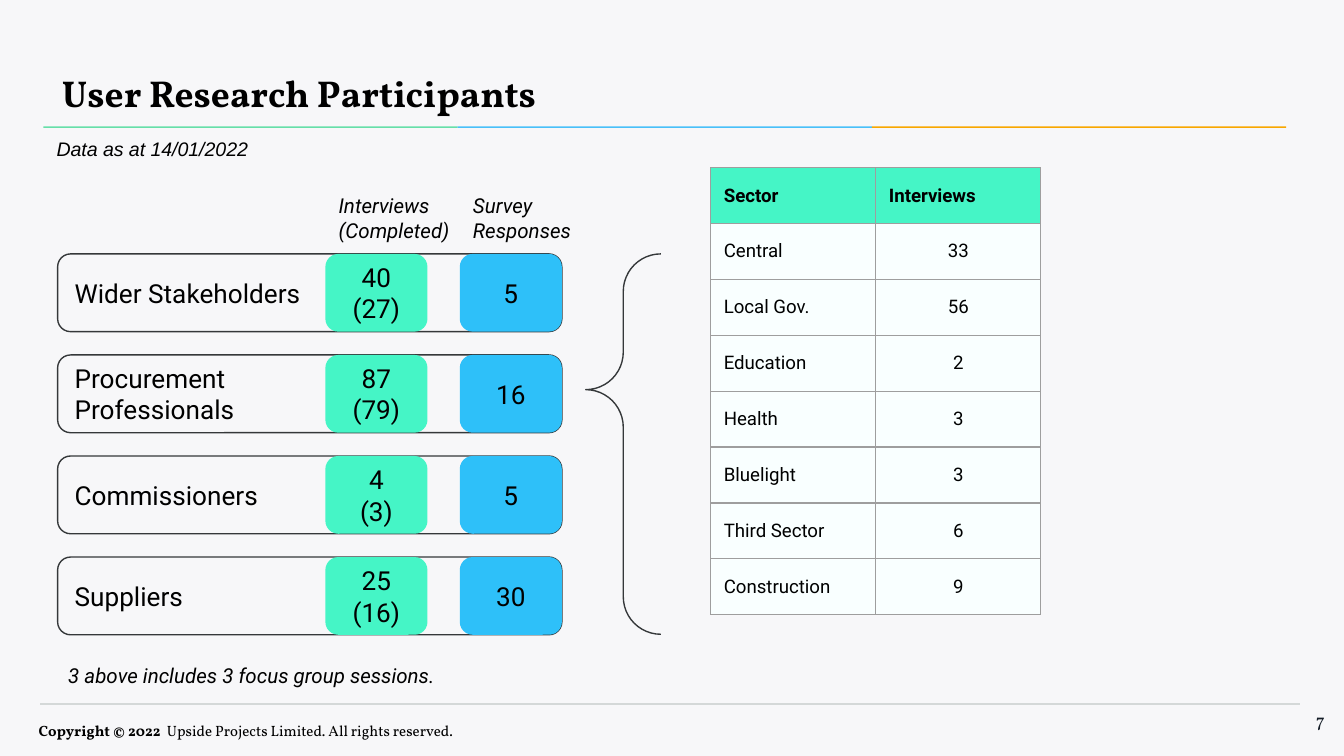
"""Build the slide of user research participants."""

from dataclasses import dataclass
from typing import Any

from lxml.etree import SubElement
from pptx import Presentation
from pptx.dml.color import RGBColor
from pptx.enum.shapes import MSO_CONNECTOR, MSO_SHAPE
from pptx.enum.text import MSO_ANCHOR, PP_ALIGN
from pptx.oxml.ns import qn
from pptx.util import Cm, Pt

BLACK = RGBColor(0x00, 0x00, 0x00)
INK = RGBColor(0x15, 0x1E, 0x28)
OUTLINE = RGBColor(0x35, 0x38, 0x3A)
PAPER = RGBColor(0xF7, 0xF7, 0xF9)
MINT = RGBColor(0x45, 0xF5, 0xC6)
SKY = RGBColor(0x2E, 0xC0, 0xF9)
CELL = RGBColor(0xF9, 0xFF, 0xFF)
RULE = RGBColor(0xD4, 0xD8, 0xD8)
BORDER = RGBColor(0x9E, 0x9E, 0x9E)
STRIPES = (
    RGBColor(0x66, 0xDF, 0xA9),
    RGBColor(0x49, 0xC0, 0xF9),
    RGBColor(0xF8, 0xA7, 0x00),
)

BODY = {"name": "Roboto", "size": Pt(14), "bold": False}
NOTE = {"name": "Roboto", "size": Pt(11), "italic": True}
DATE = {"name": "Arial", "size": Pt(10.5), "italic": True}
TITLE = {"name": "Vollkorn", "size": Pt(20), "bold": True}
NUMBER = {"name": "Vollkorn", "size": Pt(10)}
FOOTER = {"name": "Vollkorn", "size": Pt(8), "bold": False}
TABLE_BODY = {"name": "Roboto", "size": Pt(10), "bold": False}


@dataclass(frozen=True)
class Area:
    """A rectangle in centimetres."""

    left: float
    top: float
    width: float
    height: float

    def lengths(self) -> tuple[Cm, Cm, Cm, Cm]:
        """Return the four lengths for a python-pptx call."""
        return Cm(self.left), Cm(self.top), Cm(self.width), Cm(self.height)


@dataclass(frozen=True)
class Group:
    """A group of participants with its counts."""

    name: tuple[str, ...]
    interviews: int
    completed: int
    responses: int


@dataclass(frozen=True)
class Label:
    """A text box with one paragraph."""

    text: str
    area: Area
    look: dict[str, Any]
    inset: tuple[float, float] = (0.25, 0.25)
    color: RGBColor = BLACK
    align: PP_ALIGN = PP_ALIGN.LEFT


GROUPS = (
    Group(("Wider Stakeholders",), 40, 27, 5),
    Group(("Procurement", "Professionals"), 87, 79, 16),
    Group(("Commissioners",), 4, 3, 5),
    Group(("Suppliers",), 25, 16, 30),
)
SECTORS = (
    ("Sector", "Interviews"),
    ("Central", "33"),
    ("Local Gov.", "56"),
    ("Education", "2"),
    ("Health", "3"),
    ("Bluelight", "3"),
    ("Third Sector", "6"),
    ("Construction", "9"),
)
LABELS = (
    Label("User Research Participants", Area(1.07, 1.23, 18.62, 0.97), TITLE, (0.1, 0.1)),
    Label("Data as at 14/01/2022", Area(0.82, 2.46, 5.03, 0.71), DATE, (0.25, 0.13)),
    Label("3 above includes 3 focus group sessions.", Area(1.04, 12.29, 8.79, 0.99), NOTE),
    Label("Interviews (Completed)", Area(6.15, 3.4, 2.97, 1.45), NOTE),
    Label("Survey Responses", Area(8.69, 3.4, 2.97, 1.45), NOTE),
    Label("7", Area(23.77, 13.18, 1.52, 1.09), NUMBER, color=INK, align=PP_ALIGN.RIGHT),
)
ROW = Area(1.09, 4.8, 9.53, 1.47)
ROW_STEP = 1.91
COUNT_WIDTH = 1.93
INTERVIEWS_LEFT, RESPONSES_LEFT = 6.15, 8.69


def format_font(font: Any, look: dict[str, Any], color: RGBColor = BLACK) -> None:
    """Apply a dict of format values and a colour to a font."""
    for key, value in look.items():
        setattr(font, key, value)
    font.color.rgb = color


def set_margins(target: Any, across: float, down: float) -> None:
    """Set the inner margins of a text frame or cell."""
    for side, size in (("left", across), ("right", across), ("top", down), ("bottom", down)):
        setattr(target, f"margin_{side}", Cm(size))


def write_lines(frame: Any, lines: tuple[str, ...], look: dict[str, Any],
                align: PP_ALIGN, color: RGBColor = BLACK) -> None:
    """Write one paragraph per line."""
    frame.word_wrap = True
    for index, line in enumerate(lines):
        para = frame.paragraphs[0] if index == 0 else frame.add_paragraph()
        para.alignment = align
        span = para.add_run()
        span.text = line
        format_font(span.font, look, color)


def draw_label(page: Any, label: Label) -> None:
    """Draw a text box."""
    frame = page.shapes.add_textbox(*label.area.lengths()).text_frame
    set_margins(frame, *label.inset)
    write_lines(frame, (label.text,), label.look, label.align, label.color)


def draw_shape(page: Any, kind: MSO_SHAPE, area: Area, fill: RGBColor | None = None,
               outline: RGBColor | None = None) -> Any:
    """Draw a preset shape without shadow."""
    shape = page.shapes.add_shape(kind, *area.lengths())
    shape.shadow.inherit = False
    if fill is None:
        shape.fill.background()
    else:
        shape.fill.solid()
        shape.fill.fore_color.rgb = fill
    if outline is None:
        shape.line.fill.background()
    else:
        shape.line.color.rgb = outline
        shape.line.width = Pt(0.75)
    return shape


def draw_card(page: Any, area: Area, lines: tuple[str, ...], fill: RGBColor,
              outline: RGBColor | None = None, align: PP_ALIGN = PP_ALIGN.CENTER) -> None:
    """Draw a rounded card with text."""
    card = draw_shape(page, MSO_SHAPE.ROUNDED_RECTANGLE, area, fill, outline)
    card.adjustments[0] = 0.167
    frame = card.text_frame
    frame.vertical_anchor = MSO_ANCHOR.MIDDLE
    set_margins(frame, 0.25, 0.25)
    write_lines(frame, lines, BODY, align)


def draw_group(page: Any, group: Group, top: float) -> None:
    """Draw one row of participants with both counts."""
    draw_card(page, Area(ROW.left, top, ROW.width, ROW.height), group.name,
              PAPER, OUTLINE, PP_ALIGN.LEFT)
    counts = (
        (INTERVIEWS_LEFT, (str(group.interviews), f"({group.completed})"), MINT),
        (RESPONSES_LEFT, (str(group.responses),), SKY),
    )
    for left, lines, fill in counts:
        draw_card(page, Area(left, top, COUNT_WIDTH, ROW.height), lines, fill)


def add_borders(cell: Any) -> None:
    """Give a cell a thin border on each side."""
    properties = cell._tc.get_or_add_tcPr()
    for side in ("lnL", "lnR", "lnT", "lnB"):
        line = SubElement(properties, qn(f"a:{side}"), w=str(Pt(0.75)))
        solid = SubElement(line, qn("a:solidFill"))
        SubElement(solid, qn("a:srgbClr"), val=str(BORDER))


def draw_sectors(page: Any, area: Area) -> None:
    """Draw the table of interviews by sector."""
    table = page.shapes.add_table(len(SECTORS), 2, *area.lengths()).table
    table.first_row = table.horz_banding = False
    for row, values in enumerate(SECTORS):
        for column, text in enumerate(values):
            header = row == 0
            cell = table.cell(row, column)
            add_borders(cell)
            cell.fill.solid()
            cell.fill.fore_color.rgb = MINT if header else CELL
            cell.vertical_anchor = MSO_ANCHOR.MIDDLE
            set_margins(cell, 0.25, 0.25)
            align = PP_ALIGN.CENTER if column and not header else PP_ALIGN.LEFT
            write_lines(cell.text_frame, (text,), TABLE_BODY | {"bold": header}, align)


def draw_footer(page: Any) -> None:
    """Draw the footer rule and the copyright line."""
    rule = page.shapes.add_connector(
        MSO_CONNECTOR.STRAIGHT, Cm(0.76), Cm(13.31), Cm(24.56), Cm(13.31))
    rule.line.color.rgb = RULE
    rule.line.width = Pt(0.75)
    SubElement(rule._element.spPr, qn("a:effectLst"))
    draw_label(page, Label("Copyright © 2022  ", Area(0.48, 13.44, 15.29, 0.61),
                           FOOTER | {"bold": True}, (0.25, 0.13)))
    para = page.shapes[-1].text_frame.paragraphs[0]
    para.line_spacing = 1.2
    span = para.add_run()
    span.text = "Upside Projects Limited. All rights reserved."
    format_font(span.font, FOOTER)


def main() -> None:
    """Build and save the deck."""
    deck = Presentation()
    deck.slide_width, deck.slide_height = Cm(25.4), Cm(14.29)
    page = deck.slides.add_slide(deck.slide_layouts[6])
    page.background.fill.solid()
    page.background.fill.fore_color.rgb = PAPER
    draw_footer(page)
    for index, color in enumerate(STRIPES):
        draw_shape(page, MSO_SHAPE.RECTANGLE, Area(0.82 + index * 7.83, 2.39, 7.83, 0.03), color)
    for index, group in enumerate(GROUPS):
        draw_group(page, group, ROW.top + index * ROW_STEP)
    for label in LABELS:
        draw_label(page, label)
    brace = draw_shape(page, MSO_SHAPE.LEFT_BRACE, Area(11.07, 4.8, 1.42, 7.19), outline=OUTLINE)
    brace.adjustments[0], brace.adjustments[1] = 0.5, 0.357
    draw_sectors(page, Area(13.43, 3.17, 6.24, 8.45))
    deck.save("out.pptx")


if __name__ == "__main__":
    main()
